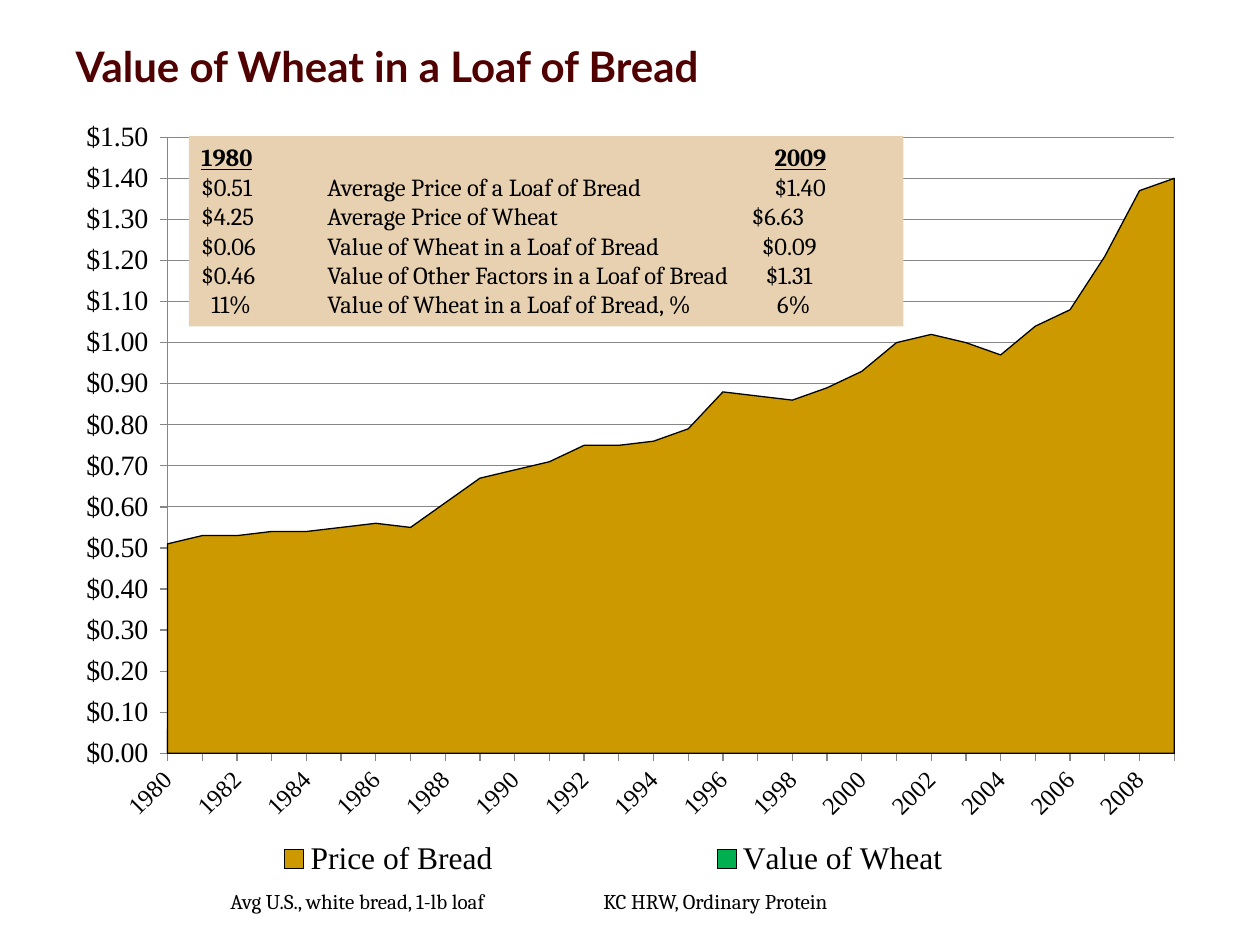
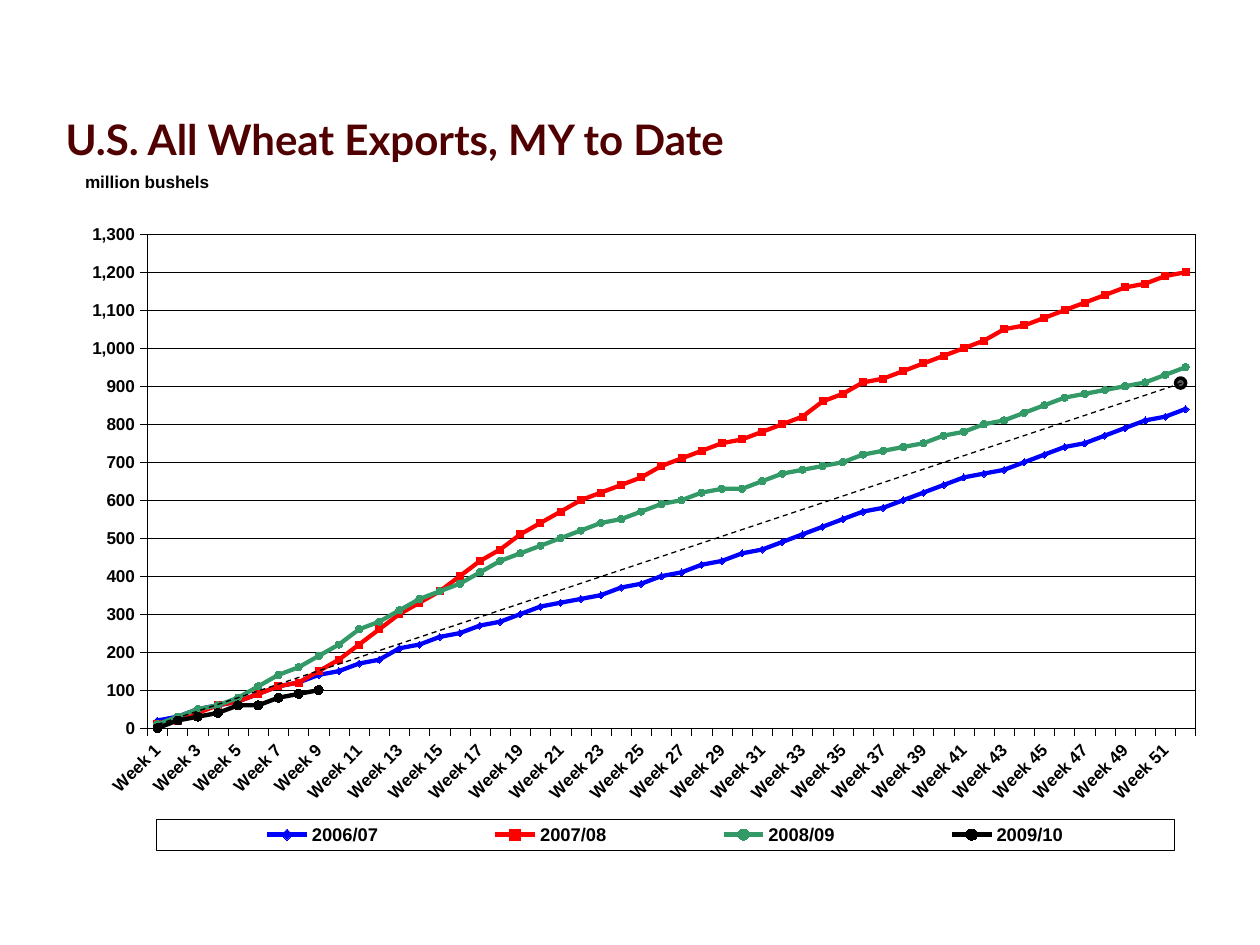
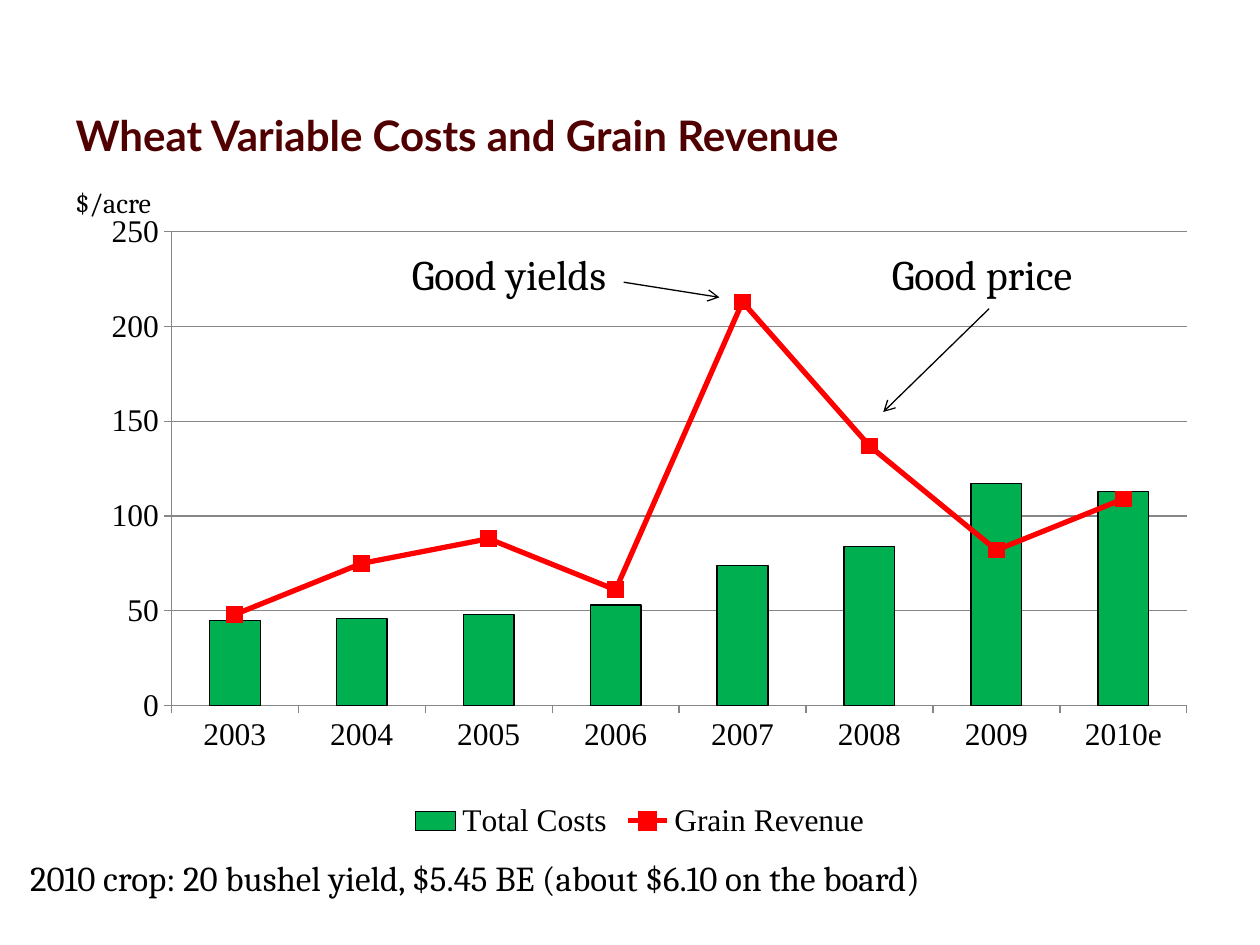
from lxml.etree import SubElement
from pptx import Presentation
from pptx.chart.data import CategoryChartData
from pptx.dml.color import RGBColor
from pptx.enum.chart import XL_CHART_TYPE as CT, XL_LEGEND_POSITION as LP
from pptx.enum.chart import XL_MARKER_STYLE as MS, XL_TICK_MARK as TM
from pptx.enum.dml import MSO_LINE
from pptx.enum.shapes import MSO_CONNECTOR, MSO_SHAPE
from pptx.enum.text import MSO_ANCHOR, MSO_AUTO_SIZE, PP_ALIGN
from pptx.oxml.ns import qn
from pptx.oxml.xmlchemy import OxmlElement
from pptx.util import Pt

PX = 9144  # 100 px to the inch
MAROON = RGBColor(0x50, 0x00, 0x00)
BLACK = RGBColor(0x00, 0x00, 0x00)
GRID_GRAY = RGBColor(0x86, 0x86, 0x86)
DOT_GRAY = RGBColor(0x59, 0x59, 0x59)
TAN = RGBColor(0xE7, 0xD1, 0xB1)
GOLD = RGBColor(0xCC, 0x99, 0x00)
GREEN = RGBColor(0x00, 0xB0, 0x50)
SEA_GREEN = RGBColor(0x33, 0x99, 0x66)
RED = RGBColor(0xFF, 0x00, 0x00)
BLUE = RGBColor(0x00, 0x00, 0xFF)
TITLE_FONT, BODY_FONT = "Lato", "Cambria"
SLANT = "-2700000"

BREAD_PRICES = [
    0.51, 0.53, 0.53, 0.54, 0.54, 0.55, 0.56, 0.55, 0.61, 0.67,
    0.69, 0.71, 0.75, 0.75, 0.76, 0.79, 0.88, 0.87, 0.86, 0.89,
    0.93, 1, 1.02, 1, 0.97, 1.04, 1.08, 1.21, 1.37, 1.4]
WHEAT_VALUES = [
    0.06, 0.06, 0.06, 0.05, 0.05, 0.05, 0.04, 0.04, 0.04, 0.06,
    0.06, 0.04, 0.05, 0.05, 0.05, 0.05, 0.08, 0.07, 0.05, 0.04,
    0.04, 0.05, 0.04, 0.06, 0.06, 0.05, 0.06, 0.07, 0.1, 0.09]
PRICE_ROWS = [
    ([100, 455], ["1980", "", "2009"]),
    ([100, 455], ["$0.51", "Average Price of a Loaf of Bread", "$1.40"]),
    ([100, 437], ["$4.25", "Average Price of Wheat", "$6.63"]),
    ([100, 445], ["$0.06", "Value of Wheat in a Loaf of Bread", "$0.09"]),
    ([100, 448], ["$0.46", "Value of Other Factors in a Loaf of Bread", "$1.31"]),
    ([8, 100, 457], ["", "11%", "Value of Wheat in a Loaf of Bread, %", "6%"]),
]
EXPORTS = {
    "2006/07": [
        20, 30, 50, 60, 70, 90, 110, 120, 140, 150, 170, 180, 210,
        220, 240, 250, 270, 280, 300, 320, 330, 340, 350, 370, 380, 400,
        410, 430, 440, 460, 470, 490, 510, 530, 550, 570, 580, 600, 620,
        640, 660, 670, 680, 700, 720, 740, 750, 770, 790, 810, 820, 840],
    "2007/08": [
        10, 20, 40, 60, 70, 90, 110, 120, 150, 180, 220, 260, 300,
        330, 360, 400, 440, 470, 510, 540, 570, 600, 620, 640, 660, 690,
        710, 730, 750, 760, 780, 800, 820, 860, 880, 910, 920, 940, 960,
        980, 1000, 1020, 1050, 1060, 1080, 1100, 1120, 1140, 1160, 1170, 1190, 1200],
    "2008/09": [
        10, 30, 50, 60, 80, 110, 140, 160, 190, 220, 260, 280, 310,
        340, 360, 380, 410, 440, 460, 480, 500, 520, 540, 550, 570, 590,
        600, 620, 630, 630, 650, 670, 680, 690, 700, 720, 730, 740, 750,
        770, 780, 800, 810, 830, 850, 870, 880, 890, 900, 910, 930, 950],
    "2009/10": [0, 20, 30, 40, 60, 60, 80, 90, 100] + [None] * 43,
}
EXPORT_STYLES = [
    (BLUE, 2.45, MS.DIAMOND, 4), (RED, 2.45, MS.SQUARE, 4),
    (SEA_GREEN, 2.45, MS.CIRCLE, 4), (BLACK, 2.5, MS.CIRCLE, 5)]
COSTS = {
    "Total Costs": [45, 46, 48, 53, 74, 84, 117, 113],
    "Grain Revenue": [48, 75, 88, 61, 213, 137, 82, 109],
}


def set_font(font, size, name=BODY_FONT, color=BLACK, bold=None):
    font.size, font.name, font.bold = Pt(size), name, bold
    font.color.rgb = color


def set_line(line, color, width):
    line.color.rgb = color
    line.width = Pt(width)


def set_area(fmt, color):
    fmt.fill.solid()
    fmt.fill.fore_color.rgb = color
    set_line(fmt.line, BLACK, 0.75)


def style_line_series(series, color, width, marker, size):
    series.smooth = False
    set_line(series.format.line, color, width)
    series.marker.style, series.marker.size = marker, size
    series.marker.format.fill.solid()
    series.marker.format.fill.fore_color.rgb = color
    set_line(series.marker.format.line, color, 0.75)


def place(parent, frame, box, after=None, inner=False):
    """Pin a chart part at a slide position (box) inside the chart's frame."""
    for old in parent.findall(qn("c:layout")):
        parent.remove(old)
    layout = OxmlElement("c:layout")
    if after:
        parent.find(qn(after)).addnext(layout)
    else:
        parent.insert(0, layout)
    manual = SubElement(layout, qn("c:manualLayout"))
    values = [("layoutTarget", "inner")] if inner else []
    values += [("xMode", "edge"), ("yMode", "edge")]
    left, top, width, height = frame
    values += [("x", (box[0] - left) / width), ("y", (box[1] - top) / height)]
    values += zip("wh", (n / full for n, full in zip(box[2:], (width, height))))
    for tag, value in values:
        SubElement(manual, qn(f"c:{tag}")).set("val", str(value))


def style_axes(chart, top, step, size, color, width, between="between"):
    cat, val = chart.category_axis, chart.value_axis
    val.minimum_scale, val.maximum_scale, val.major_unit = 0, top, step
    val.has_major_gridlines = True
    set_line(val.major_gridlines.format.line, color, width)
    for axis in (cat, val):
        axis.major_tick_mark, axis.minor_tick_mark = TM.OUTSIDE, TM.NONE
        axis.tick_labels.font.size = Pt(size)
        set_line(axis.format.line, color, width)
    for old in val._element.findall(qn("c:crossBetween")):
        val._element.remove(old)
    crossing = OxmlElement("c:crossBetween")
    crossing.set("val", between)
    val._element.find(qn("c:crosses")).addnext(crossing)


def slant_labels(axis):
    body = axis._element.find(qn("c:txPr")).find(qn("a:bodyPr"))
    body.set("rot", SLANT)
    body.set("vert", "horz")
    skip = OxmlElement("c:tickLblSkip")
    skip.set("val", "2")
    axis._element.find(qn("c:noMultiLvlLbl")).addprevious(skip)


def plot_area(chart):
    return chart._chartSpace.find(".//" + qn("c:plotArea"))


def move_last_series_to_line(chart):
    bars = plot_area(chart).find(qn("c:barChart"))
    ser = bars.findall(qn("c:ser"))[-1]
    for flag in ser.findall(qn("c:invertIfNegative")):
        ser.remove(flag)
    lines = OxmlElement("c:lineChart")
    SubElement(lines, qn("c:grouping")).set("val", "standard")
    SubElement(lines, qn("c:varyColors")).set("val", "0")
    lines.append(ser)
    SubElement(lines, qn("c:marker")).set("val", "1")
    for axis_id in bars.findall(qn("c:axId")):
        SubElement(lines, qn("c:axId")).set("val", axis_id.get("val"))
    bars.addnext(lines)


class Deck:
    def __init__(self):
        self.prs = Presentation()
        self.prs.slide_width, self.prs.slide_height = 1000 * PX, 750 * PX
        self.slide = None

    def new_slide(self, title, box):
        self.slide = self.prs.slides.add_slide(self.prs.slide_layouts[5])
        sp = self.slide.shapes.title
        sp.left, sp.top, sp.width, sp.height = (n * PX for n in box)
        tf = sp.text_frame
        tf.text = title
        tf.word_wrap, tf.auto_size = True, MSO_AUTO_SIZE.NONE
        tf.vertical_anchor = MSO_ANCHOR.MIDDLE
        p = tf.paragraphs[0]
        p.alignment = PP_ALIGN.LEFT
        set_font(p.font, 24, TITLE_FONT, MAROON, True)

    def shape(self, kind, box, fill):
        sp = self.slide.shapes.add_shape(kind, *(n * PX for n in box))
        sp.shadow.inherit = False
        sp.fill.solid()
        sp.fill.fore_color.rgb = fill
        sp.line.fill.background()
        return sp

    def text(self, box, rows, size, sp=None, heading=False):
        """Write rows of (tab stops, cells) into sp or a new text box."""
        sp = sp or self.slide.shapes.add_textbox(*(n * PX for n in box))
        tf = sp.text_frame
        tf.word_wrap, tf.vertical_anchor = True, MSO_ANCHOR.TOP
        for i, (tabs, cells) in enumerate(rows):
            p = tf.add_paragraph() if i else tf.paragraphs[0]
            p.alignment = PP_ALIGN.LEFT
            if tabs:
                tab_list = SubElement(p._p.get_or_add_pPr(), qn("a:tabLst"))
                for pos in tabs:
                    tab = SubElement(tab_list, qn("a:tab"))
                    tab.set("pos", str(pos * PX))
                    tab.set("algn", "l")
            set_font(p.font, size)
            for j, cell in enumerate(cells):
                if j:
                    p.add_run().text = "\t"
                if cell:
                    r = p.add_run()
                    r.text = cell
                    if heading and i == 0:
                        r.font.bold = r.font.underline = True

    def line(self, start, end, dashed=False, arrow=False):
        ends = (n * PX for n in (*start, *end))
        cxn = self.slide.shapes.add_connector(MSO_CONNECTOR.STRAIGHT, *ends)
        set_line(cxn.line, BLACK, 0.75)
        if dashed:
            cxn.line.dash_style = MSO_LINE.DASH
        sp_pr = cxn._element.spPr
        if arrow:
            SubElement(sp_pr.find(qn("a:ln")), qn("a:tailEnd")).set("type", "arrow")
        SubElement(sp_pr, qn("a:effectLst"))

    def chart(self, kind, box, plot, cats, series, font, size, bold=False, legend=None):
        data = CategoryChartData()
        data.categories = cats
        for name, values in series.items():
            data.add_series(name, values)
        frame = self.slide.shapes.add_chart(kind, *(n * PX for n in box), data)
        chart = frame.chart
        chart.has_title = False
        set_font(chart.font, size, font, BLACK, bold)
        chart.plots[0].vary_by_categories = False
        chart.has_legend = True
        chart.legend.position = LP.BOTTOM
        chart.legend.include_in_layout = False
        place(plot_area(chart), box, plot, inner=True)
        if legend:
            place(chart.legend._element, box, legend, "c:legendPos")
        return chart


def bread_slide(deck):
    deck.new_slide("Value of Wheat in a Loaf of Bread", (50, 30, 900, 45))
    chart = deck.chart(
        CT.AREA, (50, 83, 900, 625), (133, 109, 799, 489),
        [str(year) for year in range(1980, 2010)],
        {"Price of Bread": BREAD_PRICES, "Value of Wheat": WHEAT_VALUES},
        "Times New Roman", 18, legend=(56, 663, 862, 38))
    style_axes(chart, 1.5, 0.1, 16, GRID_GRAY, 0.75, "midCat")
    chart.category_axis.tick_labels.font.size = Pt(14)
    slant_labels(chart.category_axis)
    labels = chart.value_axis.tick_labels
    labels.number_format = '"$"#,##0.00_);\\("$"#,##0.00\\)'
    labels.number_format_is_linked = False
    for series, color in zip(chart.plots[0].series, (GOLD, GREEN)):
        set_area(series.format, color)
    deck.text((67, 700, 775, 30), [
        ([106, 402], ["", "Avg U.S., white bread, 1-lb loaf", "KC HRW, Ordinary Protein"])], 12)
    panel = deck.shape(MSO_SHAPE.RECTANGLE, (150, 108, 567, 151), TAN)
    deck.text(None, PRICE_ROWS, 14, sp=panel, heading=True)


def exports_slide(deck):
    deck.new_slide("U.S. All Wheat Exports, MY to Date", (42, 75, 900, 70))
    box = (41, 115, 917, 588)
    chart = deck.chart(
        CT.LINE_MARKERS, box, (117, 186, 832, 392),
        [f"Week {n}" for n in range(1, 53)], EXPORTS,
        "Arial", 15.5, True, legend=(124, 650, 808, 25))
    style_axes(chart, 1300, 100, 9.8, BLACK, 0.2)
    slant_labels(chart.category_axis)
    val = chart.value_axis
    val.tick_labels.number_format = "#,##0"
    val.tick_labels.number_format_is_linked = False
    tf = val.axis_title.text_frame
    tf.text = "million bushels"
    set_font(tf.paragraphs[0].font, 9.8, "Arial", BLACK, True)
    tf._txBody.bodyPr.set("rot", "0")
    tf._txBody.bodyPr.set("vert", "horz")
    place(val.axis_title._element, box, (65, 133), "c:tx")
    set_font(chart.legend.font, 10.5, "Arial", BLACK, True)
    for parent in (plot_area(chart), chart.legend._element):
        sp_pr = OxmlElement("c:spPr")
        ln = SubElement(sp_pr, qn("a:ln"), w=str(Pt(0.2)))
        fill = SubElement(ln, qn("a:solidFill"))
        SubElement(fill, qn("a:srgbClr"), val=str(BLACK))
        tx_pr = parent.find(qn("c:txPr"))
        if tx_pr is None:
            parent.append(sp_pr)
        else:
            tx_pr.addprevious(sp_pr)
    for series, style in zip(chart.plots[0].series, EXPORT_STYLES):
        style_line_series(series, *style)
    target = deck.shape(MSO_SHAPE.OVAL, (933, 300, 8, 8), DOT_GRAY)
    set_line(target.line, BLACK, 2)
    deck.line((125, 575), (938, 304), dashed=True)


def costs_slide(deck):
    deck.new_slide("Wheat Variable Costs and Grain Revenue", (50, 58, 900, 97))
    chart = deck.chart(
        CT.COLUMN_STACKED, (58, 150, 900, 520), (136, 184, 806, 376),
        [str(year) for year in range(2003, 2010)] + ["2010e"], COSTS,
        "Times New Roman", 18)
    style_axes(chart, 250, 50, 18, GRID_GRAY, 0.75)
    move_last_series_to_line(chart)
    bars, lines = chart.plots
    bars.gap_width, bars.overlap = 150, 100
    set_area(bars.series[0].format, GREEN)
    style_line_series(lines.series[0], RED, 3, MS.SQUARE, 9)
    deck.text((50, 142, 92, 37), [([], ["$/acre"])], 16)
    deck.text((14, 675, 781, 44), [
        ([], ["2010 crop: 20 bushel yield, $5.45 BE (about $6.10 on the board)"])], 20)
    deck.text((310, 192, 610, 91), [([7, 388], ["", "Good yields", "Good price"])], 24)
    deck.line((785, 245), (701, 327), arrow=True)
    deck.line((495, 224), (571, 236), arrow=True)


def main():
    deck = Deck()
    bread_slide(deck)
    exports_slide(deck)
    costs_slide(deck)
    deck.prs.save("out.pptx")


if __name__ == "__main__":
    main()
